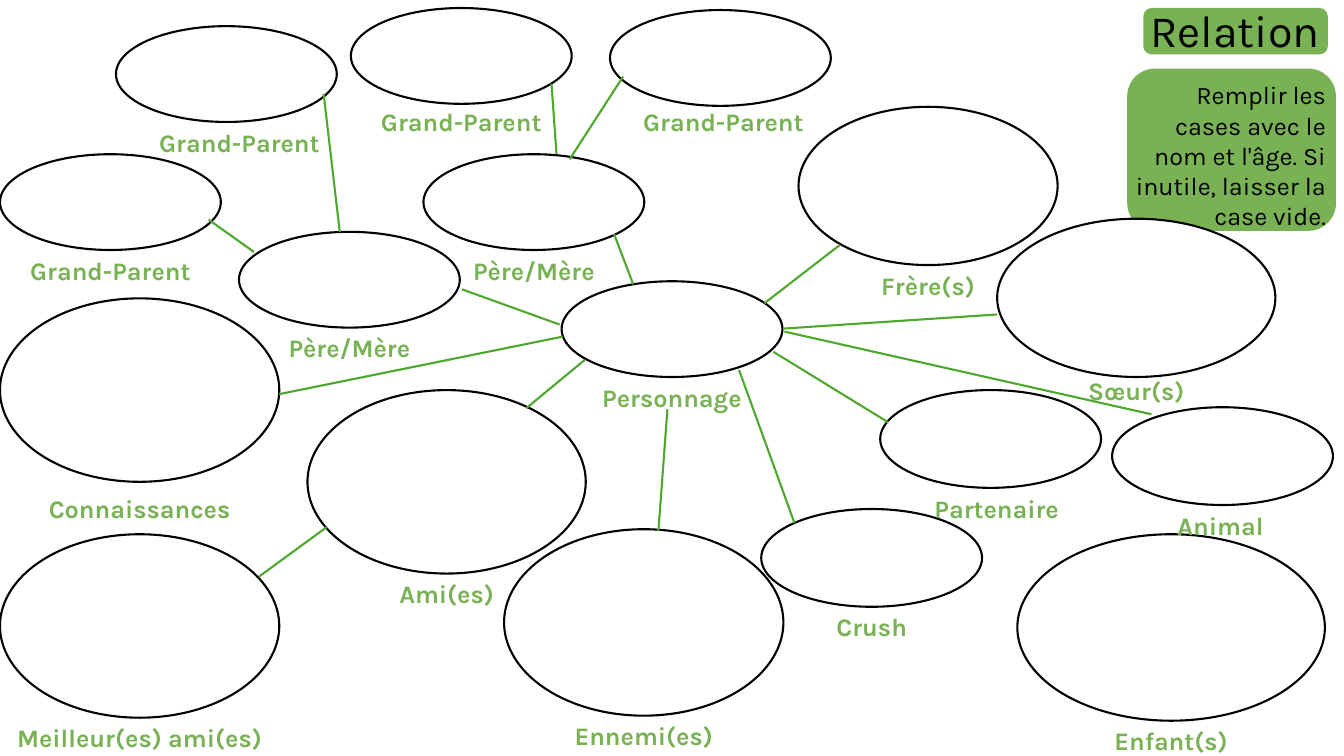
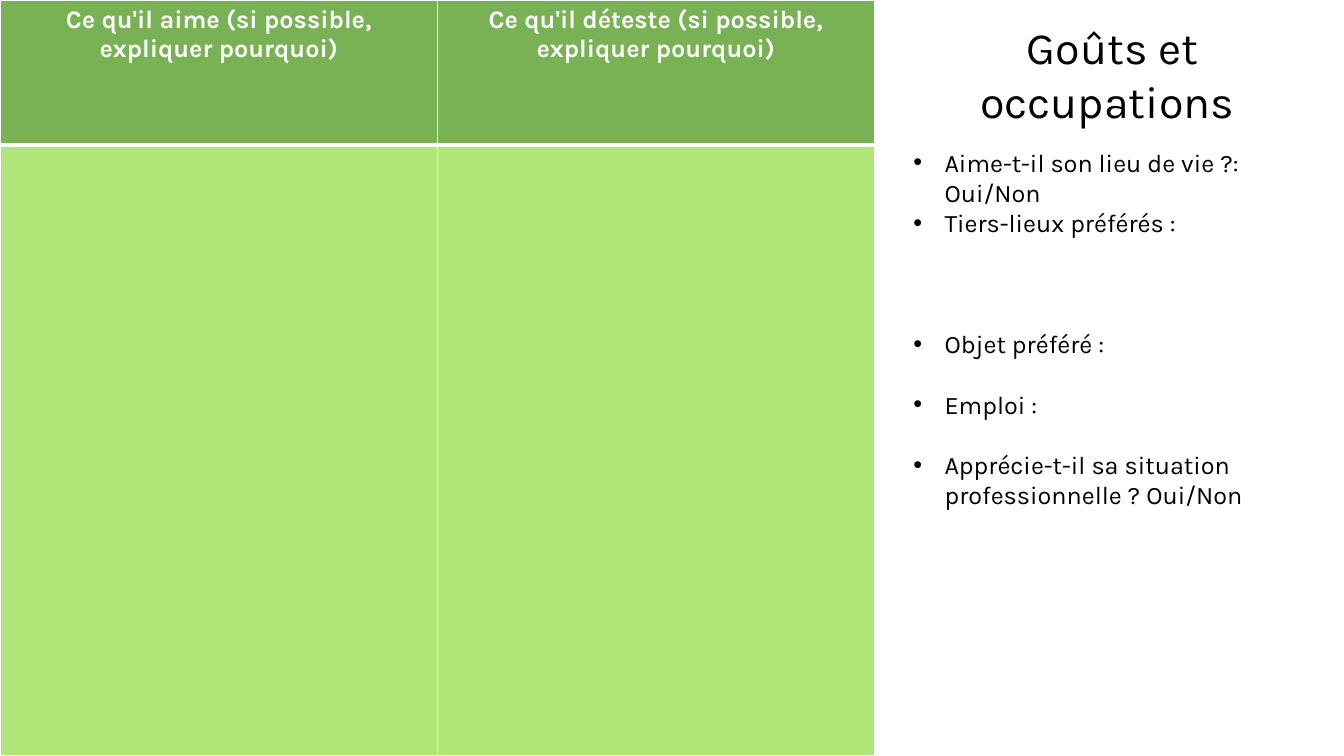
from dataclasses import dataclass

from lxml import etree
from pptx import Presentation
from pptx.dml.color import RGBColor
from pptx.enum.shapes import MSO_CONNECTOR, MSO_SHAPE
from pptx.enum.text import MSO_AUTO_SIZE, PP_ALIGN
from pptx.oxml.ns import qn
from pptx.util import Inches, Pt

ELLIPSE, ROUNDED = MSO_SHAPE.OVAL, MSO_SHAPE.ROUNDED_RECTANGLE
STRAIGHT = MSO_CONNECTOR.STRAIGHT
LEFT, CENTER, RIGHT = PP_ALIGN.LEFT, PP_ALIGN.CENTER, PP_ALIGN.RIGHT
FIT_TEXT = MSO_AUTO_SIZE.SHAPE_TO_FIT_TEXT


@dataclass(frozen=True)
class Theme:
    font: str = "Karla"
    title: int = 32
    body: int = 18
    line: float = 1.5
    text_line: float = 21.6  # height of one line of body text, in points
    black: str = "000000"
    white: str = "FFFFFF"
    green: str = "79B254"
    light: str = "B0E677"
    link: str = "4EA72E"


T = Theme()


def rgb(color):
    return RGBColor.from_string(color)


class Deck:
    """Holds the presentation, its style and the current slide."""

    def __init__(self):
        self.prs = Presentation()
        self.prs.slide_width, self.prs.slide_height = Inches(13.33), Inches(7.5)
        self.s = None

    def slide(self):
        self.s = self.prs.slides.add_slide(self.prs.slide_layouts[6])

    def shape(self, kind, box, fill, line):
        sp = self.s.shapes.add_shape(kind, *map(Inches, box))
        sp.shadow.inherit = False
        sp.fill.solid()
        sp.fill.fore_color.rgb = rgb(fill)
        sp.line.color.rgb = rgb(line)
        sp.line.width = Pt(T.line)

    def run(self, p, text, size, color, bold=False):
        r = p.add_run()
        r.text = text
        r.font.name, r.font.size, r.font.bold = T.font, Pt(size), bold
        r.font.color.rgb = rgb(color)

    def frame(self, box, insets=(0.1, 0.05)):
        tf = self.s.shapes.add_textbox(*map(Inches, box)).text_frame
        tf.word_wrap, tf.auto_size = True, FIT_TEXT
        tf.margin_left = tf.margin_right = Inches(insets[0])
        tf.margin_top = tf.margin_bottom = Inches(insets[1])
        return tf

    def text(self, box, text, size=T.body, color=T.black, bold=False,
             align=CENTER, insets=(0.1, 0.05)):
        p = self.frame(box, insets).paragraphs[0]
        p.alignment = align
        self.run(p, text, size, color, bold)

    def bullets(self, box, items):
        """Each item is its text and the number of free lines after it."""
        tf = self.frame(box)
        for i, (text, free_lines) in enumerate(items):
            p = tf.add_paragraph() if i else tf.paragraphs[0]
            p.alignment = LEFT
            p.space_after = Pt(free_lines * T.text_line)
            self.run(p, text, T.body, T.black)
            pPr = p._p.get_or_add_pPr()
            pPr.set("marL", str(Inches(0.31)))
            pPr.set("indent", str(Inches(-0.31)))
            etree.SubElement(pPr, qn("a:buFont")).set("typeface", "Arial")
            etree.SubElement(pPr, qn("a:buChar")).set("char", "•")

    def link(self, start, end):
        c = self.s.shapes.add_connector(STRAIGHT, *map(Inches, start + end))
        c.line.color.rgb = rgb(T.link)
        c.line.width = Pt(T.line)
        etree.SubElement(c._element.spPr, qn("a:effectLst"))

    def cell(self, cell, fill, borders):
        """Borders are widths in points: left, right, top, bottom."""
        cell.fill.solid()
        cell.fill.fore_color.rgb = rgb(fill)
        tcPr = cell._tc.get_or_add_tcPr()
        for i, (side, width) in enumerate(zip("LRTB", borders)):
            ln = etree.Element(qn(f"a:ln{side}"), w=str(Pt(width)))
            solid = etree.SubElement(ln, qn("a:solidFill"))
            etree.SubElement(solid, qn("a:srgbClr")).set("val", T.white)
            tcPr.insert(i, ln)

    def table(self, box, widths, heights, headers):
        table = self.s.shapes.add_table(
            len(heights), len(widths), *map(Inches, box)).table
        for row, height in zip(table.rows, heights):
            row.height = Inches(height)
        for i, (width, header) in enumerate(zip(widths, headers)):
            table.columns[i].width = Inches(width)
            head = table.cell(0, i)
            self.cell(head, T.green, (1, 1, 1, 3))
            p = head.text_frame.paragraphs[0]
            p.alignment = CENTER
            self.run(p, header, T.body, T.white, True)
            for j in range(1, len(heights)):
                self.cell(table.cell(j, i), T.light, (1, 1, 3 if j == 1 else 1, 1))


# Label, ellipse (left, top, width, height), label width, label shift (x, y)
SMALL, MEDIUM = (2.19, 0.95), (2.19, 0.97)
PEOPLE = [
    ("Personnage", (5.57, 2.79, *SMALL), 1.69, (0, 0)),
    ("Père/Mère", (4.2, 1.53, *SMALL), 1.69, (0, 0)),
    ("Père/Mère", (2.37, 2.3, *SMALL), 1.69, (0, 0)),
    ("Grand-Parent", (1.15, 0.26, *SMALL), 3, (0.13, 0)),
    ("Grand-Parent", (0, 1.53, *SMALL), 1.89, (0, 0)),
    ("Grand-Parent", (6.05, 0.1, *SMALL), 1.99, (0.03, -0.04)),
    ("Grand-Parent", (3.48, 0.08, *SMALL), 2.07, (0, -0.02)),
    ("Frère(s)", (7.92, 1.06, 2.57, 1.57), 1.69, (0, 0)),
    ("Sœur(s)", (9.89, 2.17, 2.76, 1.57), 1.69, (0, -0.07)),
    ("Connaissances", (0, 2.96, 2.77, 1.82), 2.01, (0, 0.06)),
    ("Ami(es)", (3.05, 3.87, 2.76, 1.82), 2.01, (0, 0)),
    ("Meilleur(es) ami(es)", (0, 5.3, 2.77, 1.82), 2.76, (0, 0)),
    ("Ennemi(es)", (5, 5.25, 2.77, 1.85), 2.01, (0, 0)),
    ("Partenaire", (8.73, 3.87, *MEDIUM), 2.01, (0.06, 0)),
    ("Crush", (7.55, 5.05, *MEDIUM), 2.01, (0, 0)),
    ("Enfant(s)", (10.09, 5.3, 3.05, 1.85), 2.01, (0, 0)),
    ("Animal", (11.03, 4.04, *MEDIUM), 1.35, (-0.02, 0)),
]

LINKS = [
    ((7.58, 3.01), (8.33, 2.43)),
    ((6.09, 2.32), (6.28, 2.82)),
    ((4.58, 2.87), (5.55, 3.22)),
    ((2.07, 2.18), (2.52, 2.5)),
    ((3.21, 0.93), (3.37, 2.3)),
    ((5.47, 0.83), (5.52, 1.53)),
    ((6.18, 0.76), (5.65, 1.58)),
    ((7.77, 3.26), (9.89, 3.12)),
    ((7.67, 3.49), (8.81, 4.19)),
    ((7.33, 3.67), (7.88, 5.19)),
    ((6.53, 5.27), (6.62, 4.06)),
    ((5.22, 4.05), (5.8, 3.57)),
    ((2.57, 5.72), (3.24, 5.23)),
    ((5.58, 3.34), (2.77, 3.91)),
    ((7.78, 3.29), (11.42, 4.11)),
]


def relations(deck):
    deck.slide()
    # Title and instructions
    tight = (0.06, 0.03)
    deck.shape(ROUNDED, (11.19, 0.69, 2.05, 1.59), T.green, T.green)
    deck.shape(ROUNDED, (11.35, 0.09, 1.81, 0.44), T.green, T.green)
    deck.text((10.74, 0, 2.41, 0.6), "Relation", T.title,
              align=RIGHT, insets=tight)
    deck.text((11.16, 0.76, 2.05, 1.57),
              "Remplir les cases avec le nom et l'âge. "
              "Si inutile, laisser la case vide.", align=RIGHT, insets=tight)
    # Ellipses, then the labels centred below them
    for _, box, _, _ in PEOPLE:
        deck.shape(ELLIPSE, box, T.white, T.black)
    for label, (x, y, w, h), width, (dx, dy) in PEOPLE:
        deck.text((x + (w - width) / 2 + dx, y + h + dy, width, 0.4),
                  label, color=T.green, bold=True)
    # Links
    for start, end in LINKS:
        deck.link(start, end)


def tastes(deck):
    deck.slide()
    # Likes and dislikes
    deck.table((0, 0, 8.67, 7.5), (4.34, 4.33), (1.44, 6.06),
               ("Ce qu'il aime (si possible, expliquer pourquoi)",
                "Ce qu'il déteste (si possible, expliquer pourquoi)"))
    # Title and questions
    deck.text((9.51, 0.15, 3.05, 1.18), "Goûts et occupations ", T.title)
    deck.bullets((8.96, 1.41, 3.75, 4.64), [
        ("Aime-t-il son lieu de vie ?: Oui/Non", 0),
        ("Tiers-lieux préférés :", 3),
        ("Objet préféré :", 1),
        ("Emploi :", 1),
        ("Apprécie-t-il sa situation professionnelle ? Oui/Non", 0),
    ])


def main():
    deck = Deck()
    relations(deck)
    tastes(deck)
    deck.prs.save("out.pptx")


if __name__ == "__main__":
    main()
